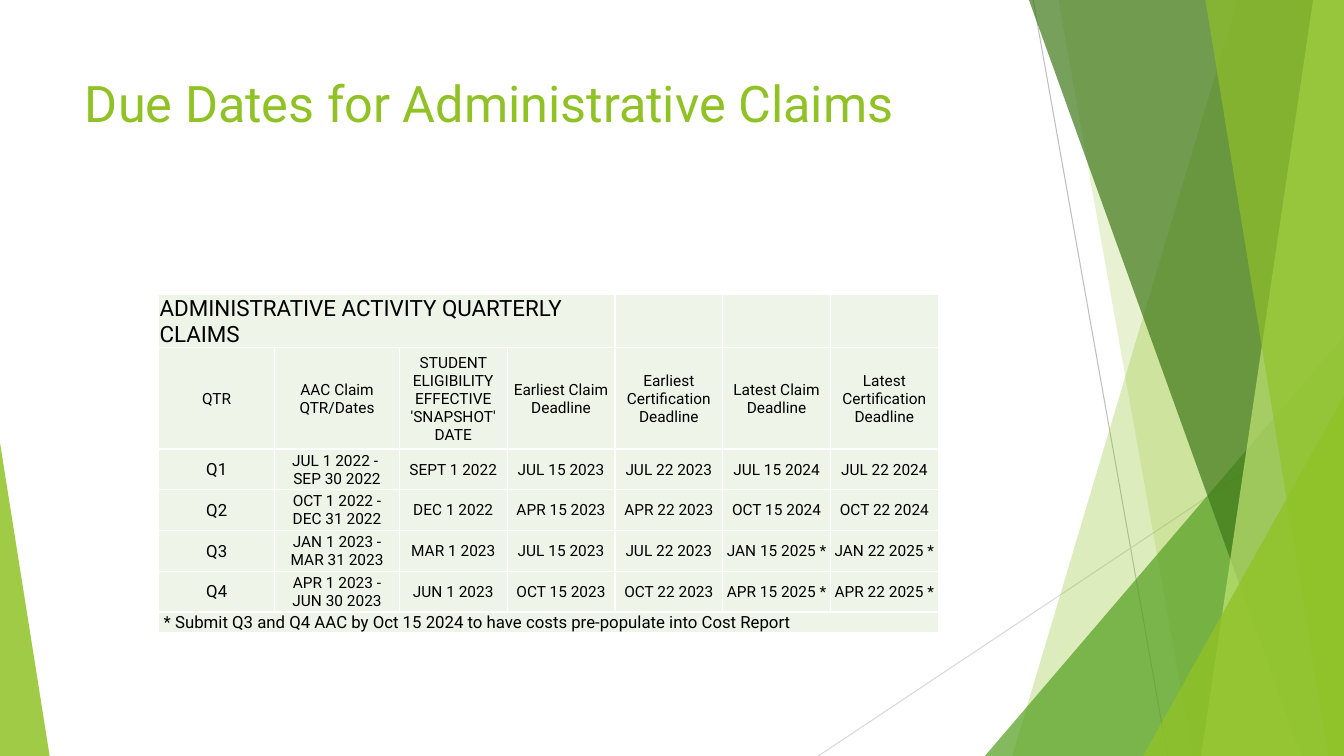
from lxml.etree import SubElement
from pptx import Presentation
from pptx.dml.color import RGBColor
from pptx.enum.shapes import MSO_CONNECTOR, MSO_SHAPE
from pptx.enum.text import MSO_ANCHOR, PP_ALIGN
from pptx.oxml.ns import qn
from pptx.util import Pt

LIME = RGBColor(0x90, 0xC2, 0x26)
GREEN = RGBColor(0x54, 0xA0, 0x21)
DARK = RGBColor(0x3F, 0x78, 0x19)
PALE = RGBColor(0xC0, 0xE4, 0x74)
GRAY = RGBColor(0xBF, 0xBF, 0xBF)
SILVER = RGBColor(0xD9, 0xD9, 0xD9)
MINT = RGBColor(0xEE, 0xF4, 0xE8)
BLACK = RGBColor(0, 0, 0)
FONT = "Roboto"
WIDTH, HEIGHT = 960, 540

deck = Presentation()
deck.slide_width, deck.slide_height = Pt(WIDTH), Pt(HEIGHT)
slide = deck.slides.add_slide(deck.slide_layouts[5])
shapes = slide.shapes


def strip(top, foot):
    """Full-height band from a slanted left edge to the right slide edge."""
    form = shapes.build_freeform(Pt(top), 0)
    form.add_line_segments([(Pt(WIDTH), 0), (Pt(WIDTH), Pt(HEIGHT)), (Pt(foot), Pt(HEIGHT))])
    return form.convert_to_shape()


def wedge(left, top, width, apex):
    """Triangle standing on the bottom slide edge."""
    shape = shapes.add_shape(MSO_SHAPE.ISOSCELES_TRIANGLE,
                             Pt(left), Pt(top), Pt(width), Pt(HEIGHT - top))
    shape.adjustments[0] = apex
    return shape


# Background lines and facets
for x1, y1, x2, color in [(738, 0, 834, GRAY), (WIDTH, 290, 584.5, SILVER)]:
    line = shapes.add_connector(MSO_CONNECTOR.STRAIGHT, Pt(x1), Pt(y1), Pt(x2), Pt(HEIGHT))
    line.line.color.rgb = color
    line.line.width = Pt(0.75)
    SubElement(line._element.spPr, qn("a:effectLst"))

facets = [
    (strip(884, 723), LIME, 30),
    (strip(756, 852), LIME, 20),
    (wedge(703.5, 240, 256.5, 1), GREEN, 72),
    (strip(735, 929.5), DARK, 70),
    (strip(938, 858), PALE, 70),
    (strip(861, 949), LIME, 65),
    (wedge(816.5, 283, 143.5, 1), LIME, 80),
    (wedge(0, 316, 35.5, 0), LIME, 85),
]
for facet, color, alpha in facets:
    facet.shadow.inherit = False
    facet.line.fill.background()
    facet.fill.solid()
    facet.fill.fore_color.rgb = color
    tint = facet._element.spPr.find(qn("a:solidFill"))[0]
    SubElement(tint, qn("a:alpha"), val=str(alpha * 1000))

# Title
title = shapes.title
title.left, title.top, title.width, title.height = Pt(53.5), Pt(48), Pt(677), Pt(104)
title.text_frame.text = "Due Dates for Administrative Claims"
title.text_frame.vertical_anchor = MSO_ANCHOR.TOP
para = title.text_frame.paragraphs[0]
para.alignment = PP_ALIGN.LEFT
font = para.runs[0].font
font.name, font.size, font.color.rgb = FONT, Pt(36), LIME
shapes._spTree.append(title._element)

# Table of deadlines
rows = [
    ["ADMINISTRATIVE ACTIVITY QUARTERLY CLAIMS"] + [""] * 6,
    ["QTR", "AAC Claim QTR/Dates", "STUDENT ELIGIBILITY EFFECTIVE 'SNAPSHOT' DATE",
     "Earliest Claim Deadline", "Earliest Certification Deadline",
     "Latest Claim Deadline", "Latest Certification Deadline"],
    ["Q1", "JUL 1 2022 - \vSEP 30 2022", "SEPT 1 2022",
     "JUL 15 2023", "JUL 22 2023", "JUL 15 2024", "JUL 22 2024"],
    ["Q2", "OCT 1 2022 -\vDEC 31 2022", "DEC 1 2022",
     "APR 15 2023", "APR 22 2023", "OCT 15 2024", "OCT 22 2024"],
    ["Q3", "JAN 1 2023 -\vMAR 31 2023", "MAR 1 2023",
     "JUL 15 2023", "JUL 22 2023", "JAN 15 2025 *", "JAN 22 2025 *"],
    ["Q4", "APR 1 2023 -\vJUN 30 2023", "JUN 1 2023",
     "OCT 15 2023", "OCT 22 2023", "APR 15 2025 *", "APR 22 2025 *"],
    [" * Submit Q3 and Q4 AAC by Oct 15 2024 to have costs pre-populate into Cost Report"]
    + [""] * 6,
]
widths = [83, 89] + [77] * 5
heights = [38, 72.5] + [29.1] * 4 + [15]
last = len(rows) - 1
table = shapes.add_table(len(rows), len(widths), Pt(113.3), Pt(210.3),
                         Pt(sum(widths)), Pt(sum(heights))).table
for col, width in zip(table.columns, widths):
    col.width = Pt(width)
for row, height in zip(table.rows, heights):
    row.height = Pt(height)

for r, texts in enumerate(rows):
    for c, text in enumerate(texts):
        cell = table.cell(r, c)
        props = cell._tc.get_or_add_tcPr()
        for side in ("a:lnL", "a:lnR", "a:lnT", "a:lnB"):
            edge = SubElement(props, qn(side), w=str(Pt(1)))
            SubElement(SubElement(edge, qn("a:solidFill")), qn("a:srgbClr"), val="FFFFFF")
        cell.fill.solid()
        cell.fill.fore_color.rgb = MINT
        cell.margin_left = cell.margin_right = cell.margin_top = Pt(0.7)
        cell.margin_bottom = 0
        cell.vertical_anchor = MSO_ANCHOR.MIDDLE
        if r == 0:
            size = 16
        elif r == last or (c == 0 and r > 1):
            size = 12
        else:
            size = 11
        cell.text_frame.text = text
        para = cell.text_frame.paragraphs[0]
        para.alignment = PP_ALIGN.LEFT if r in (0, last) else PP_ALIGN.CENTER
        para.font.size = Pt(size)
        for run in para.runs:
            font = run.font
            font.name, font.size, font.color.rgb = FONT, Pt(size), BLACK
            font.bold = False

table.cell(0, 0).merge(table.cell(0, 3))
table.cell(last, 0).merge(table.cell(last, 6))

deck.save("out.pptx")
